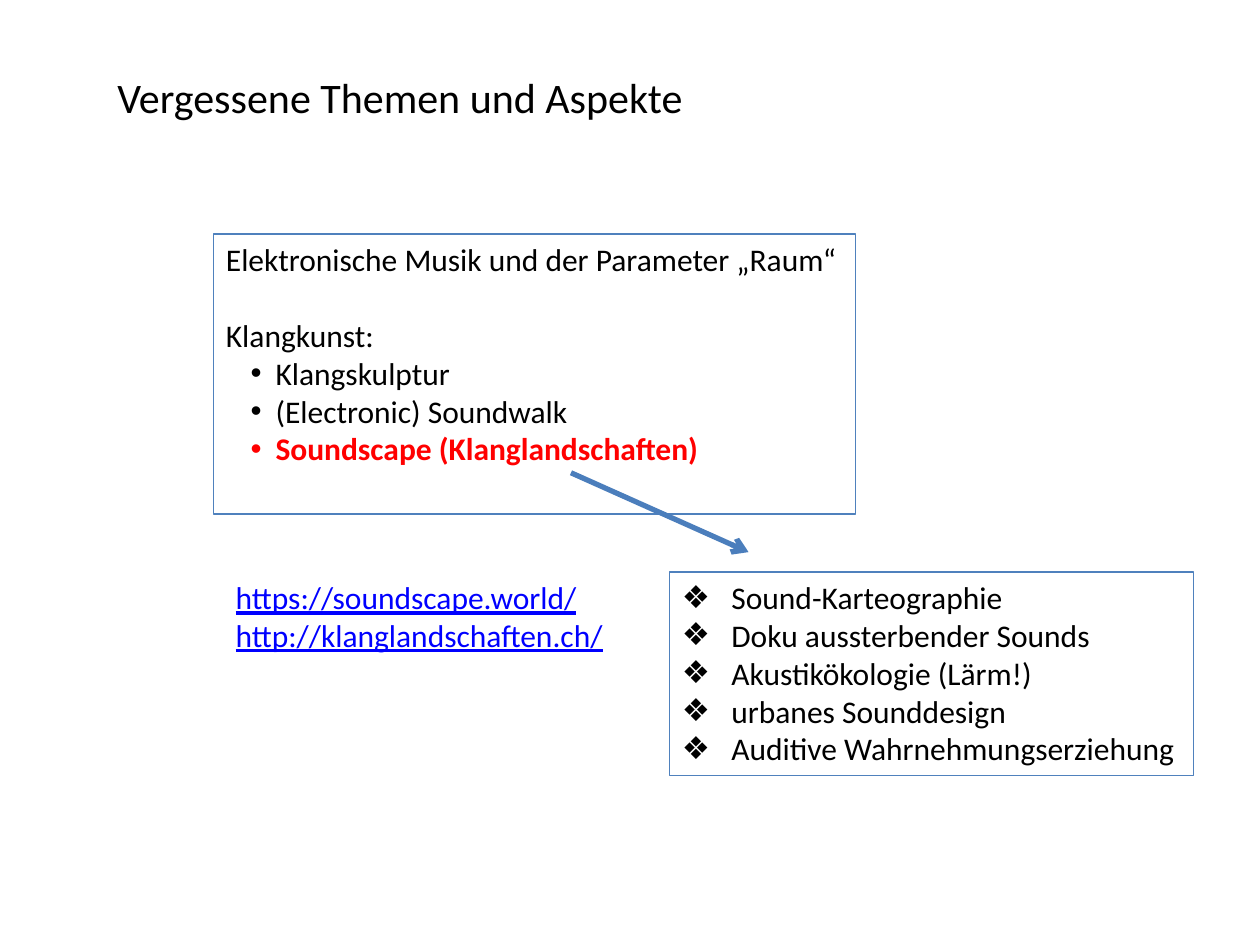
"""Build a slide about forgotten topics in electronic music and sound art."""
from lxml.etree import SubElement
from pptx import Presentation
from pptx.dml.color import RGBColor
from pptx.enum.shapes import MSO_CONNECTOR
from pptx.enum.text import MSO_ANCHOR, MSO_AUTO_SIZE, PP_ALIGN
from pptx.oxml.ns import qn
from pptx.util import Cm, Pt


def color(value):
    return RGBColor.from_string(value)


def write(box, place, lines, size=18):
    box.left, box.top, box.width, box.height = [Cm(length) for length in place]
    frame = box.text_frame
    frame.word_wrap = True
    frame.auto_size = MSO_AUTO_SIZE.NONE
    frame.vertical_anchor = MSO_ANCHOR.TOP
    for index, (text, bullet, margin, indent, before, style) in enumerate(lines):
        para = frame.paragraphs[0] if index == 0 else frame.add_paragraph()
        para.alignment = PP_ALIGN.LEFT
        para.space_before = Pt(before)
        properties = para._p.get_or_add_pPr()
        properties.set("marL", str(Cm(margin)))
        properties.set("indent", str(Cm(indent)))
        if bullet:
            SubElement(properties, qn("a:buFont"), typeface="Arial")
            SubElement(properties, qn("a:buChar"), char=bullet)
        else:
            SubElement(properties, qn("a:buNone"))
        span = para.add_run()
        span.text = text
        span.font.name = "Calibri"
        span.font.size = Pt(size)
        span.font.color.rgb = color(style.get("color", "000000"))
        span.font.bold = style.get("bold", False)
        span.font.underline = style.get("underline", False)


deck = Presentation()
deck.slide_width, deck.slide_height = Cm(25.4), Cm(19.05)
page = deck.slides.add_slide(deck.slide_layouts[3])
title, sound_art, aspects = page.placeholders

plain = (None, 0, 0, 0, {})
write(title, (2.11, 1.32, 12.04, 1.27), [("Vergessene Themen und Aspekte", *plain)], 24)

dot = ("•", 1, -0.5, 0)
write(sound_art, (4.3, 4.72, 12.95, 5.64), [
    ("Elektronische Musik und der Parameter „Raum“", *plain),
    ("Klangkunst:", None, 0, 0, 21.6, {}),
    ("Klangskulptur", *dot, {}),
    ("(Electronic) Soundwalk", *dot, {}),
    ("Soundscape (Klanglandschaften)", *dot, {"color": "FF0000", "bold": True}),
])

topics = [
    "Sound-Karteographie",
    "Doku aussterbender Sounds",
    "Akustikökologie (Lärm!)",
    "urbanes Sounddesign",
    "Auditive Wahrnehmungserziehung",
]
write(aspects, (13.49, 11.53, 10.57, 4.11),
      [(topic, "❖", 1, -1, 0, {}) for topic in topics])

for box in (sound_art, aspects):
    box.line.color.rgb = color("4F81BD")
    box.line.width = Pt(0.75)

addresses = ["https://soundscape.world/", "http://klanglandschaften.ch/"]
address_style = {"color": "0000FF", "underline": True}
address_box = page.shapes.add_textbox(0, 0, 0, 0)
write(address_box, (4.5, 11.53, 8.03, 1.8),
      [(address, None, 0, 0, 0, address_style) for address in addresses])

arrow = page.shapes.add_connector(
    MSO_CONNECTOR.STRAIGHT, Cm(11.51), Cm(9.53), Cm(15.09), Cm(11.13))
arrow.line.color.rgb = color("4B7EBC")
arrow.line.width = Pt(3)
SubElement(arrow.line._get_or_add_ln(), qn("a:tailEnd"), type="arrow")
SubElement(arrow._element.spPr, qn("a:effectLst"))

deck.save("out.pptx")
